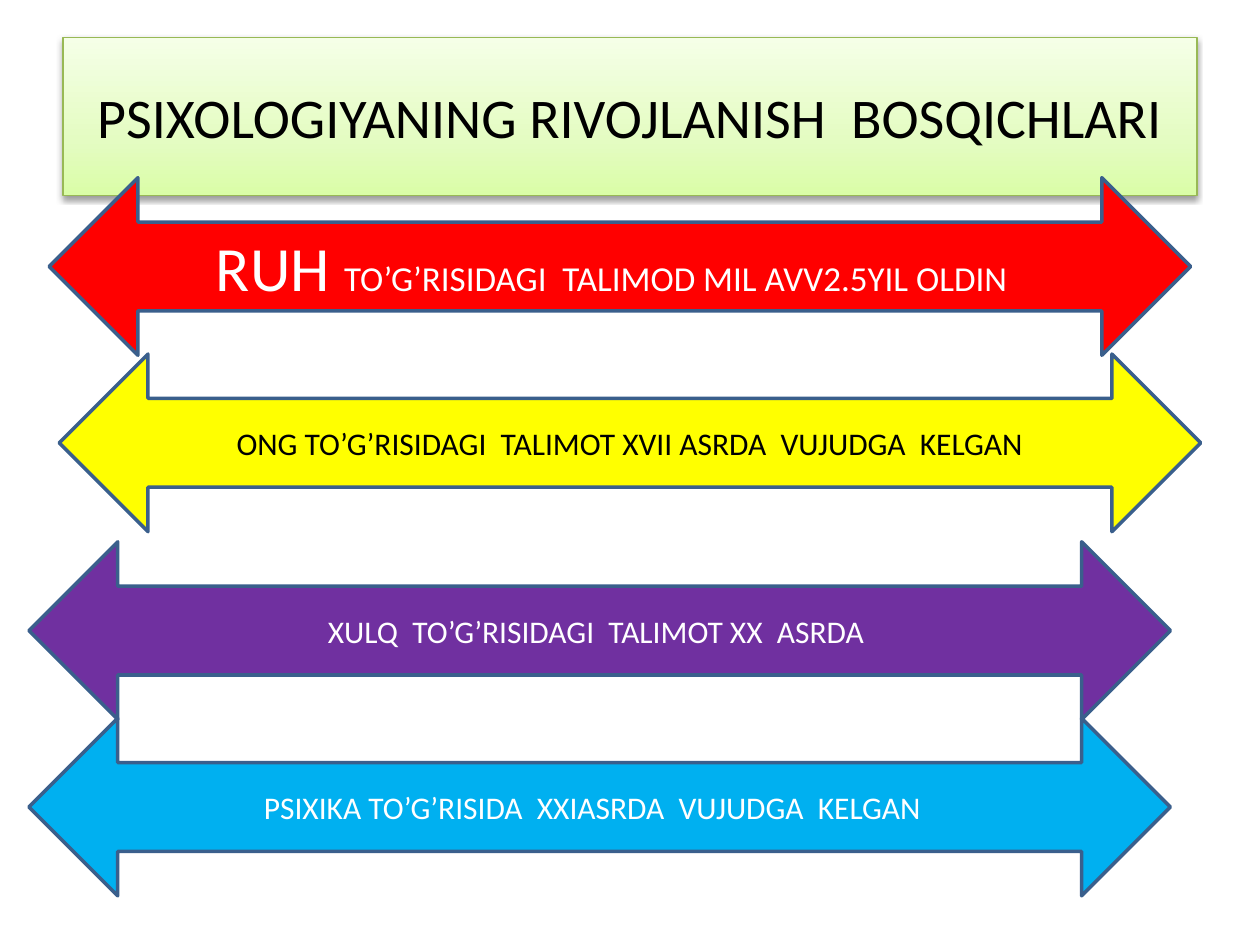
import copy

import lxml.etree
import pptx
import pptx.dml.color
import pptx.enum.shapes
import pptx.enum.text
import pptx.oxml
import pptx.oxml.ns
import pptx.util

Inches = pptx.util.Inches
Pt = pptx.util.Pt
RGB = pptx.dml.color.RGBColor.from_string
SHAPE = pptx.enum.shapes.MSO_SHAPE
qn = pptx.oxml.ns.qn

THEME = {
    "font": "Calibri",
    "black": "000000", "white": "FFFFFF",
    "red": "FF0000", "yellow": "FFFF00", "purple": "7030A0", "blue": "00B0F0",
    "arrow_line": "3A5F8C", "title_line": "98B955",
    "title_gradient": [(0, "DAFDA7"), (0.35, "E4FCC2"), (1, "F5FFE7")],
    "title_size": 32, "lead_size": 36, "first_size": 20, "body_size": 18,
}


def add_block(kind, left, top, width, height, line_color, line_width):
    block = slide.shapes.add_shape(
        kind, Inches(left), Inches(top), Inches(width), Inches(height))
    block.shadow.inherit = False
    block.line.color.rgb = RGB(line_color)
    block.line.width = Pt(line_width)
    return block


def write_centred(block, runs, color):
    frame = block.text_frame
    frame.word_wrap = True
    frame.vertical_anchor = pptx.enum.text.MSO_ANCHOR.MIDDLE
    paragraph = frame.paragraphs[0]
    paragraph.alignment = pptx.enum.text.PP_ALIGN.CENTER
    for text, size in runs:
        run = paragraph.add_run()
        run.text = text
        run.font.color.rgb = RGB(color)
        run_format = {"name": THEME["font"], "size": Pt(size)}
        for attribute, value in run_format.items():
            setattr(run.font, attribute, value)


presentation = pptx.Presentation()
presentation.slide_width = Inches(10)
presentation.slide_height = Inches(7.5)
slide = presentation.slides.add_slide(presentation.slide_layouts[6])

# Title panel with a three-stop gradient, light at the top
title = add_block(SHAPE.RECTANGLE, 0.5, 0.3, 9, 1.25, THEME["title_line"], 0.75)
title.fill.gradient()
title.fill.gradient_angle = 90
stop_list = title.fill._fill._gradFill.find(qn("a:gsLst"))
stop_list.append(copy.deepcopy(stop_list[-1]))
for stop, (position, color) in zip(title.fill.gradient_stops, THEME["title_gradient"]):
    stop.position = position
    stop.color.rgb = RGB(color)

# Soft shadow below the title panel
effects = title._element.spPr.find(qn("a:effectLst"))
shadow = lxml.etree.SubElement(
    effects, qn("a:outerShdw"), blurRad=str(Pt(3.1)), dist=str(Pt(1.6)),
    dir="5400000", rotWithShape="0")
shadow_color = lxml.etree.SubElement(shadow, qn("a:srgbClr"), val=THEME["black"])
lxml.etree.SubElement(shadow_color, qn("a:alpha"), val="38000")
write_centred(title, [("PSIXOLOGIYANING RIVOJLANISH  BOSQICHLARI", THEME["title_size"])],
              THEME["black"])

# Stages of development, one double arrow each, from back to front
body = THEME["body_size"]
stages = [
    (0.23, 4.3, "purple", "white",
     [("XULQ  TO’G’RISIDAGI  TALIMOT XX  ASRDA ", body)]),
    (0.47, 2.81, "yellow", "black",
     [("ONG TO’G’RISIDAGI  TALIMOT XVII ASRDA  VUJUDGA  KELGAN", body)]),
    (0.39, 1.41, "red", "white",
     [("RUH ", THEME["lead_size"]),
      ("TO’G’RISIDAGI  TALIMOD MIL AVV2.5YIL OLDIN  ", THEME["first_size"])]),
    (0.23, 5.7, "blue", "white",
     [("PSIXIKA TO’G’RISIDA  XXIASRDA  VUJUDGA  KELGAN  ", body)]),
]
for left, top, fill_name, text_name, runs in stages:
    stage = add_block(SHAPE.LEFT_RIGHT_ARROW, left, top, 9.06, 1.41,
                      THEME["arrow_line"], 2)
    stage.fill.solid()
    stage.fill.fore_color.rgb = RGB(THEME[fill_name])
    write_centred(stage, runs, THEME[text_name])

presentation.save("out.pptx")
